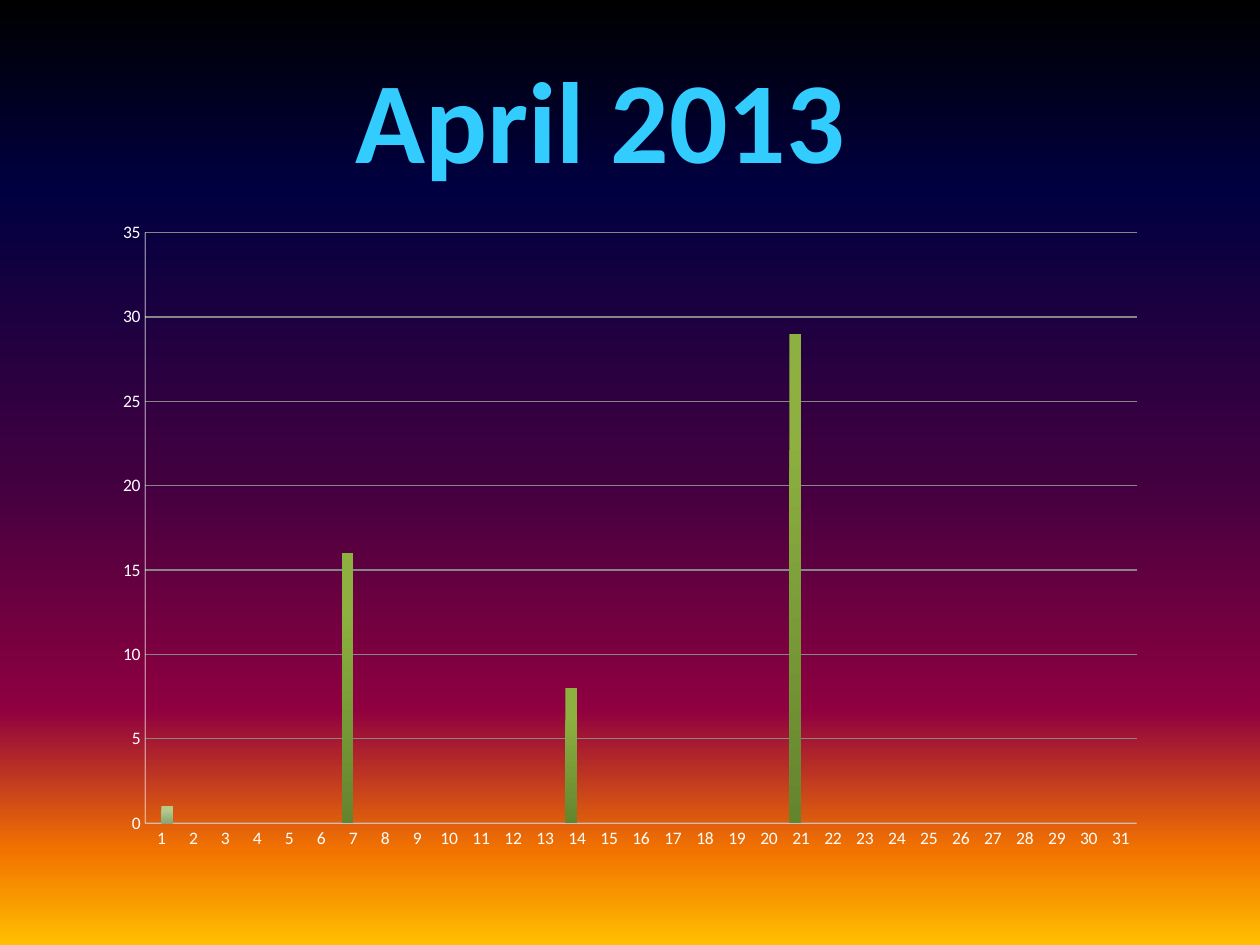
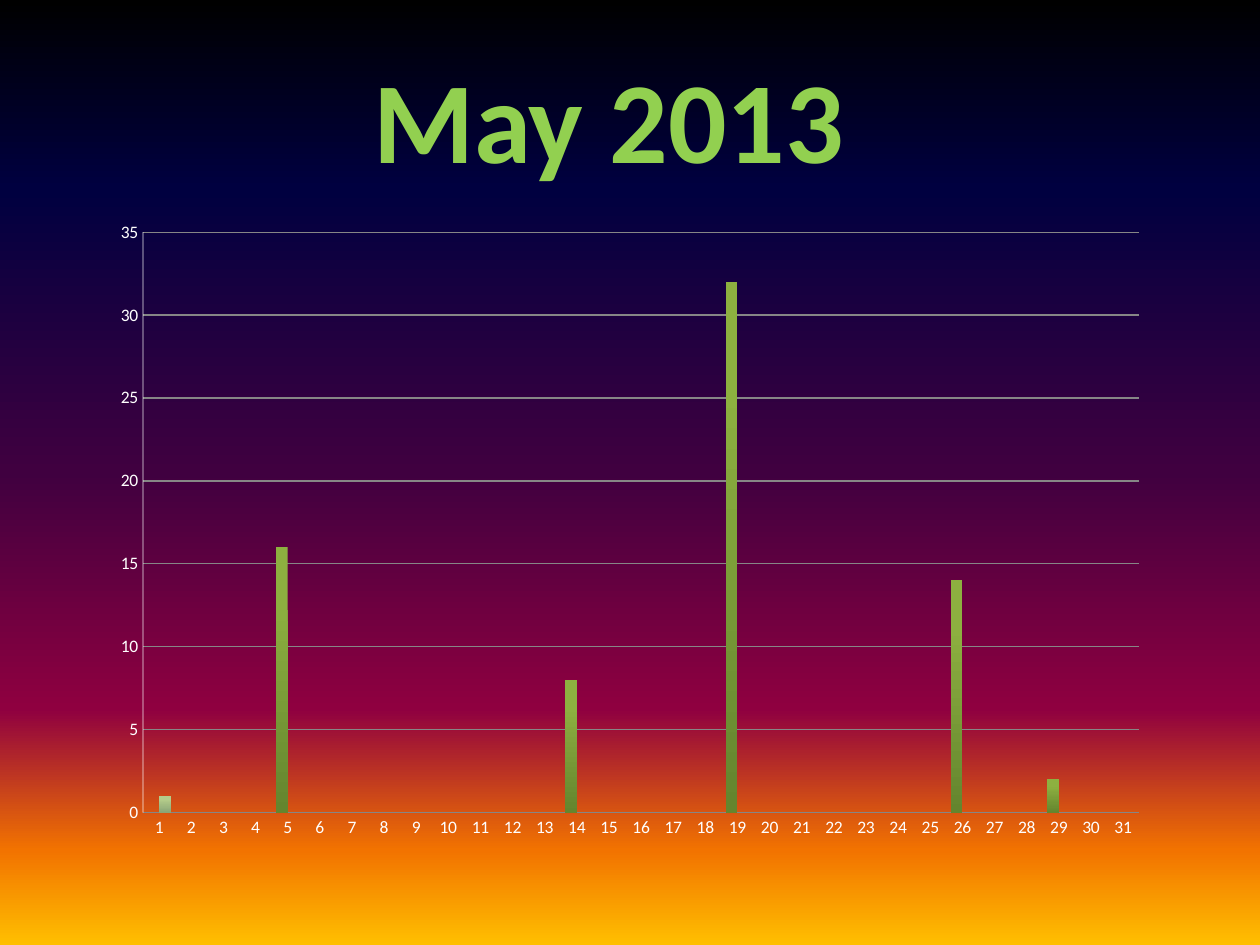
import copy

import lxml.etree
import pptx
import pptx.chart.data
import pptx.dml.color
import pptx.enum.chart
import pptx.enum.text
import pptx.oxml
import pptx.oxml.ns
import pptx.util

RGBColor = pptx.dml.color.RGBColor
qn = pptx.oxml.ns.qn

WHITE = RGBColor(0xFF, 0xFF, 0xFF)
GRID_GREY = RGBColor(0x86, 0x86, 0x86)
SKY_BLUE = RGBColor(0x33, 0xCC, 0xFF)
LIME = RGBColor(0x92, 0xD0, 0x50)
SUNSET = [
    (0, RGBColor(0x00, 0x00, 0x00)),
    (0.2, RGBColor(0x00, 0x00, 0x40)),
    (0.5, RGBColor(0x40, 0x00, 0x40)),
    (0.75, RGBColor(0x8F, 0x00, 0x40)),
    (0.9, RGBColor(0xF2, 0x73, 0x00)),
    (1, RGBColor(0xFF, 0xBF, 0x00)),
]
BAR_GRADIENTS = [
    [(0.2, RGBColor(0x8D, 0xB0, 0x40)), (1, RGBColor(0x64, 0x85, 0x2E))],
    [(0.2, RGBColor(0xB4, 0xCC, 0x8A)), (1, RGBColor(0x8A, 0xA5, 0x77))],
]

FONT = "Calibri"
COLUMNS, ROWS = 100, 75
DAYS = range(1, 32)
PLOT_PERCENT = {"x": 4.1, "y": 3.4, "w": 93.9, "h": 90.7}

MONTHS = [
    {
        "title": "April 2013",
        "title_color": SKY_BLUE,
        "title_box": (27, 3.3, 41.3, 12.1),
        "chart_box": (8.1, 16.7, 83.8, 51.7),
        "daily_values": {7: 16, 14: 8, 21: 29},
        "faint_axes": ("c:catAx", "c:valAx"),
    },
    {
        "title": "May 2013",
        "title_color": LIME,
        "title_box": (28.4, 3.3, 39.8, 12.1),
        "chart_box": (7.9, 16.7, 84.2, 50.8),
        "daily_values": {5: 16, 14: 8, 19: 32, 26: 14, 29: 2},
        "faint_axes": ("c:valAx",),
    },
]


def set_vertical_stops(fill, stops):
    """Colour the existing gradient stops from top to bottom."""
    fill.gradient_angle = 270
    for stop, (position, color) in zip(fill.gradient_stops, stops):
        stop.position = position
        stop.color.rgb = color


class MonthDeck:
    def __init__(self):
        self.presentation = pptx.Presentation()
        self.presentation.slide_width = pptx.util.Inches(10)
        self.presentation.slide_height = pptx.util.Inches(7.5)
        self.slide = None

    def place(self, box):
        """Turn (column, row, columns, rows) into lengths."""
        column = self.presentation.slide_width / COLUMNS
        row = self.presentation.slide_height / ROWS
        return [round(share * unit) for share, unit in zip(box, (column, row, column, row))]

    def add_slide(self):
        self.slide = self.presentation.slides.add_slide(self.presentation.slide_layouts[6])
        fill = self.slide.background.fill
        fill.gradient()
        stop_list = next(self.slide.element.iter(qn("a:gsLst")))
        while len(stop_list) < len(SUNSET):
            stop_list.append(copy.deepcopy(stop_list[0]))
        set_vertical_stops(fill, SUNSET)

    def add_title(self, text, color, box):
        text_frame = self.slide.shapes.add_textbox(*self.place(box)).text_frame
        text_frame.word_wrap = False
        text_frame.auto_size = pptx.enum.text.MSO_AUTO_SIZE.SHAPE_TO_FIT_TEXT
        text_frame.text = text
        paragraph = text_frame.paragraphs[0]
        paragraph.alignment = pptx.enum.text.PP_ALIGN.CENTER
        run = paragraph.runs[0]
        run.font.name = FONT
        run.font.size = pptx.util.Pt(66)
        run.font.bold = True
        run.font.color.rgb = color
        outline = pptx.oxml.parse_xml(
            f'<a:ln {pptx.oxml.ns.nsdecls("a")} w="{pptx.util.Pt(1.4)}">'
            f'<a:solidFill><a:srgbClr val="{WHITE}"/></a:solidFill></a:ln>'
        )
        run.font.fill  # the outline goes ahead of the text fill
        next(self.slide.shapes[-1].element.iter(qn("a:rPr"))).insert(0, outline)

    def add_daily_chart(self, daily_values, box, faint_axes):
        data = pptx.chart.data.CategoryChartData()
        data.categories = [str(day) for day in DAYS]
        data.add_series("Series 1", [daily_values.get(day, 0) for day in DAYS])
        data.add_series("Series 2", [1])
        chart = self.slide.shapes.add_chart(
            pptx.enum.chart.XL_CHART_TYPE.COLUMN_CLUSTERED, *self.place(box), data
        ).chart
        chart.has_legend = False
        chart.has_title = False
        chart.font.name = FONT
        chart.font.size = pptx.util.Pt(10)
        chart.font.color.rgb = WHITE
        self.style_bars(chart.plots[0])
        self.style_axes(chart, faint_axes)
        self.fix_plot_area(chart)

    def style_bars(self, plot):
        plot.gap_width = 75
        plot.overlap = 0
        plot.vary_by_categories = False
        for series, stops in zip(plot.series, BAR_GRADIENTS):
            series.format.fill.gradient()
            set_vertical_stops(series.format.fill, stops)

    def style_axes(self, chart, faint_axes):
        value_axis = chart.value_axis
        value_axis.minimum_scale, value_axis.maximum_scale = 0, 35
        value_axis.major_unit = 5
        value_axis.has_major_gridlines = True
        chart.category_axis.has_major_gridlines = False
        lines = [value_axis.major_gridlines.format.line]
        for axis, tag in ((chart.category_axis, "c:catAx"), (value_axis, "c:valAx")):
            axis.major_tick_mark = pptx.enum.chart.XL_TICK_MARK.NONE
            axis.minor_tick_mark = pptx.enum.chart.XL_TICK_MARK.NONE
            lines.append(axis.format.line)
        for line in lines:
            line.width = pptx.util.Pt(0.75)
            line.color.rgb = GRID_GREY
        for tag in faint_axes:
            axis_element = next(chart.element.iter(qn(tag)))
            color = axis_element.find(f"{qn('c:spPr')}/{qn('a:ln')}/{qn('a:solidFill')}")[0]
            color.set("val", str(WHITE))
            lxml.etree.SubElement(color, qn("a:alpha")).set("val", "50000")

    def fix_plot_area(self, chart):
        plot_area = next(chart.element.iter(qn("c:plotArea")))
        for layout in plot_area.findall(qn("c:layout")):
            plot_area.remove(layout)
        layout = lxml.etree.Element(qn("c:layout"))
        manual = lxml.etree.SubElement(layout, qn("c:manualLayout"))
        settings = {"layoutTarget": "inner", "xMode": "edge", "yMode": "edge"}
        settings |= {name: f"{share / 100:.3f}" for name, share in PLOT_PERCENT.items()}
        for name, value in settings.items():
            lxml.etree.SubElement(manual, qn(f"c:{name}")).set("val", value)
        plot_area.insert(0, layout)


def main():
    deck = MonthDeck()
    for month in MONTHS:
        deck.add_slide()
        deck.add_title(month["title"], month["title_color"], month["title_box"])
        deck.add_daily_chart(month["daily_values"], month["chart_box"], month["faint_axes"])
    deck.presentation.save("out.pptx")


if __name__ == "__main__":
    main()
